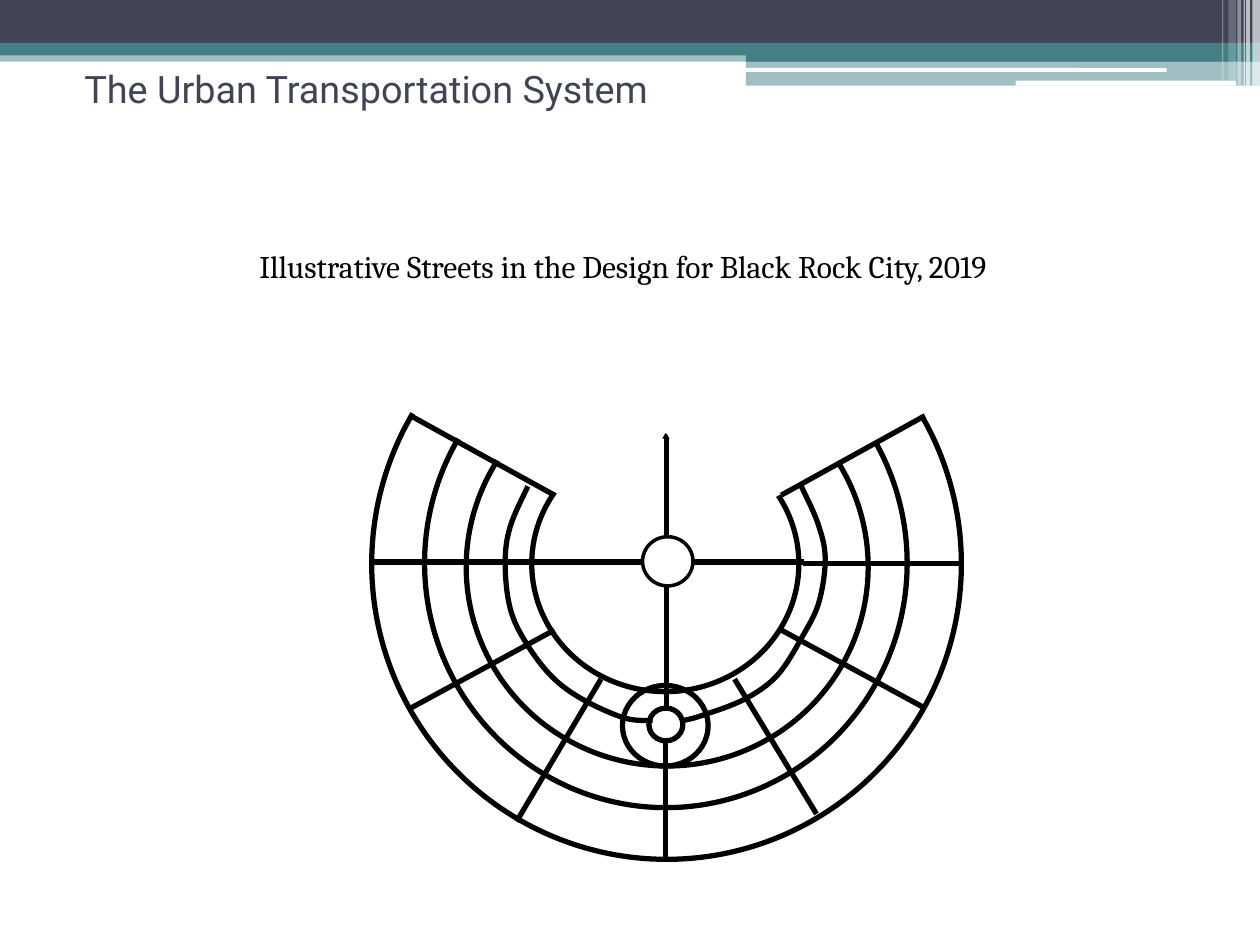
"""Build a slide with the street plan of Black Rock City under a banded header."""
import pptx
import pptx.dml.color
import pptx.enum.shapes
import pptx.enum.text
import pptx.oxml
import pptx.oxml.ns
import pptx.util

Inches = pptx.util.Inches
Pt = pptx.util.Pt
SHAPE = pptx.enum.shapes.MSO_SHAPE
ALIGN = pptx.enum.text.PP_ALIGN
ANCHOR = pptx.enum.text.MSO_ANCHOR


def rgb(value):
    return pptx.dml.color.RGBColor.from_string(value)


def add_area(shapes, kind, box, fill=None, opacity=100, outline=None):
    area = shapes.add_shape(kind, *map(Inches, box))
    area.shadow.inherit = False
    if fill:
        area.fill.solid()
        area.fill.fore_color.rgb = rgb(fill)
        if opacity < 100:
            color = area._element.spPr.find(".//" + pptx.oxml.ns.qn("a:srgbClr"))
            alpha = pptx.oxml.parse_xml(
                f'<a:alpha {pptx.oxml.ns.nsdecls("a")} val="{opacity * 1000}"/>')
            color.append(alpha)
    else:
        area.fill.background()
    if outline:
        area.line.color.rgb = rgb("000000")
        area.line.width = Pt(outline)
    else:
        area.line.fill.background()
    return area


presentation = pptx.Presentation()
presentation.slide_width = Inches(10)
presentation.slide_height = Inches(7.5)
slide = presentation.slides.add_slide(presentation.slide_layouts[5])

header_bands = [
    (SHAPE.RECTANGLE, (0, 0.4, 10, 0.09), "438086", 50),
    (SHAPE.RECTANGLE, (0, 0, 10, 0.34), "424456", 100),
    (SHAPE.RECTANGLE, (0, 0.34, 10, 0.1), "438086", 100),
    (SHAPE.RECTANGLE, (5.92, 0.39, 4.08, 0.1), "438086", 100),
    (SHAPE.RECTANGLE, (5.92, 0.48, 4.08, 0.2), "438086", 50),
    (SHAPE.ROUNDED_RECTANGLE, (5.91, 0.54, 3.35, 0.03), "FFFFFF", 100),
    (SHAPE.ROUNDED_RECTANGLE, (8.06, 0.64, 1.75, 0.04), "FFFFFF", 100),
]
for kind, box, color, opacity in header_bands:
    add_area(slide.shapes, kind, box, color, opacity)

header_stripes = [
    (9.94, 0.06, 0.68, 65), (9.89, 0.03, 0.68, 65), (9.87, 0.01, 0.68, 60),
    (9.82, 0.03, 0.68, 40), (9.75, 0.06, 0.64, 20), (9.7, 0.01, 0.64, 30),
]
for left, width, height, opacity in header_stripes:
    add_area(slide.shapes, SHAPE.RECTANGLE, (left, 0, width, height), "FFFFFF", opacity)

title = slide.shapes.title
title.left, title.top, title.width, title.height = map(Inches, (0.5, 0.58, 9, 0.58))
title.text_frame.text = "The Urban Transportation System"
title.text_frame.vertical_anchor = ANCHOR.MIDDLE
title.text_frame.margin_left = Inches(0.17)
title.text_frame.margin_top = 0
title.text_frame.margin_bottom = Inches(0.34)
heading = title.text_frame.paragraphs[0]
heading.alignment = ALIGN.LEFT
heading.font.name = "Roboto"
heading.font.size = Pt(21.6)
heading.font.color.rgb = rgb("424456")

city = slide.shapes.add_group_shape().shapes

ring_streets = [
    (2.95, 2.13, 4.68, 4.69, 3), (3.7, 2.92, 3.19, 3.16, 3),
    (4.22, 3.46, 2.12, 2.03, 3), (3.37, 2.53, 3.83, 3.88, 3),
    (4.94, 5.44, 0.68, 0.64, 3), (5.1, 4.26, 0.4, 0.39, 2),
    (5.15, 5.62, 0.27, 0.26, 3),
]
for *box, weight in ring_streets:
    add_area(city, SHAPE.OVAL, box, outline=weight)

straight_streets = [
    (5.29, 3.46, 5.29, 4.26), (5.1, 4.46, 4.21, 4.46), (6.38, 4.46, 5.49, 4.46),
    (5.29, 4.65, 5.29, 5.62), (7.34, 3.3, 6.2, 3.93), (4.4, 3.93, 3.26, 3.3),
    (4.21, 4.46, 2.95, 4.46), (7.63, 4.47, 6.37, 4.47), (5.28, 6.82, 5.28, 5.88),
    (4.4, 5, 3.26, 5.62), (4.77, 5.39, 4.1, 6.52), (7.34, 5.62, 6.2, 5),
    (6.48, 6.46, 5.83, 5.39),
]
open_desert = [((3.11, 1.17, 2.39, 2.63), 299.1), ((4.77, 1.72, 2.39, 1.92), 240.6)]
for number, ends in enumerate(straight_streets):
    if number == 4:
        for box, angle in open_desert:
            add_area(city, SHAPE.RECTANGLE, box, "FFFFFF").rotation = angle
    street = city.add_connector(
        pptx.enum.shapes.MSO_CONNECTOR.STRAIGHT, *map(Inches, ends))
    street.line.color.rgb = rgb("000000")
    street.line.width = Pt(3)
    street._element.spPr.append(
        pptx.oxml.parse_xml(f'<a:effectLst {pptx.oxml.ns.nsdecls("a")}/>'))

curved_streets = [
    [(6.36, 3.86), (6.49, 4.15), (6.55, 4.43), (6.5, 4.78), (6.37, 5.05),
     (6.17, 5.36), (5.91, 5.55), (5.57, 5.68), (5.42, 5.72)],
    [(4.19, 3.86), (4.05, 4.18), (4.01, 4.47), (4.05, 4.83), (4.18, 5.11),
     (4.39, 5.38), (4.64, 5.56), (4.96, 5.7), (5.18, 5.72)],
]
steps = 8
for corners in curved_streets:
    padded = [corners[0], *corners, corners[-1]]
    bends = []
    for before, start, end, after in zip(padded, padded[1:], padded[2:], padded[3:]):
        for step in range(1, steps + 1):
            t = step / steps
            bends.append([
                Inches(b + t * (c - a) / 2 + t**2 * (2 * a - 5 * b + 4 * c - d) / 2
                       + t**3 * (3 * b - a - 3 * c + d) / 2)
                for a, b, c, d in zip(before, start, end, after)])
    outline = city.build_freeform(*map(Inches, corners[0]))
    outline.add_line_segments(bends, close=False)
    curve = outline.convert_to_shape()
    curve.shadow.inherit = False
    curve.fill.background()
    curve.line.color.rgb = rgb("000000")
    curve.line.width = Pt(3)

caption = slide.shapes.add_textbox(*map(Inches, (1.96, 1.91, 6.62, 0.4)))
caption.text_frame.word_wrap = True
caption.text_frame.text = "Illustrative Streets in the Design for Black Rock City, 2019"
caption_line = caption.text_frame.paragraphs[0]
caption_line.font.name = "Cambria"
caption_line.font.size = Pt(18)
caption_line.font.color.rgb = rgb("000000")

presentation.save("out.pptx")
